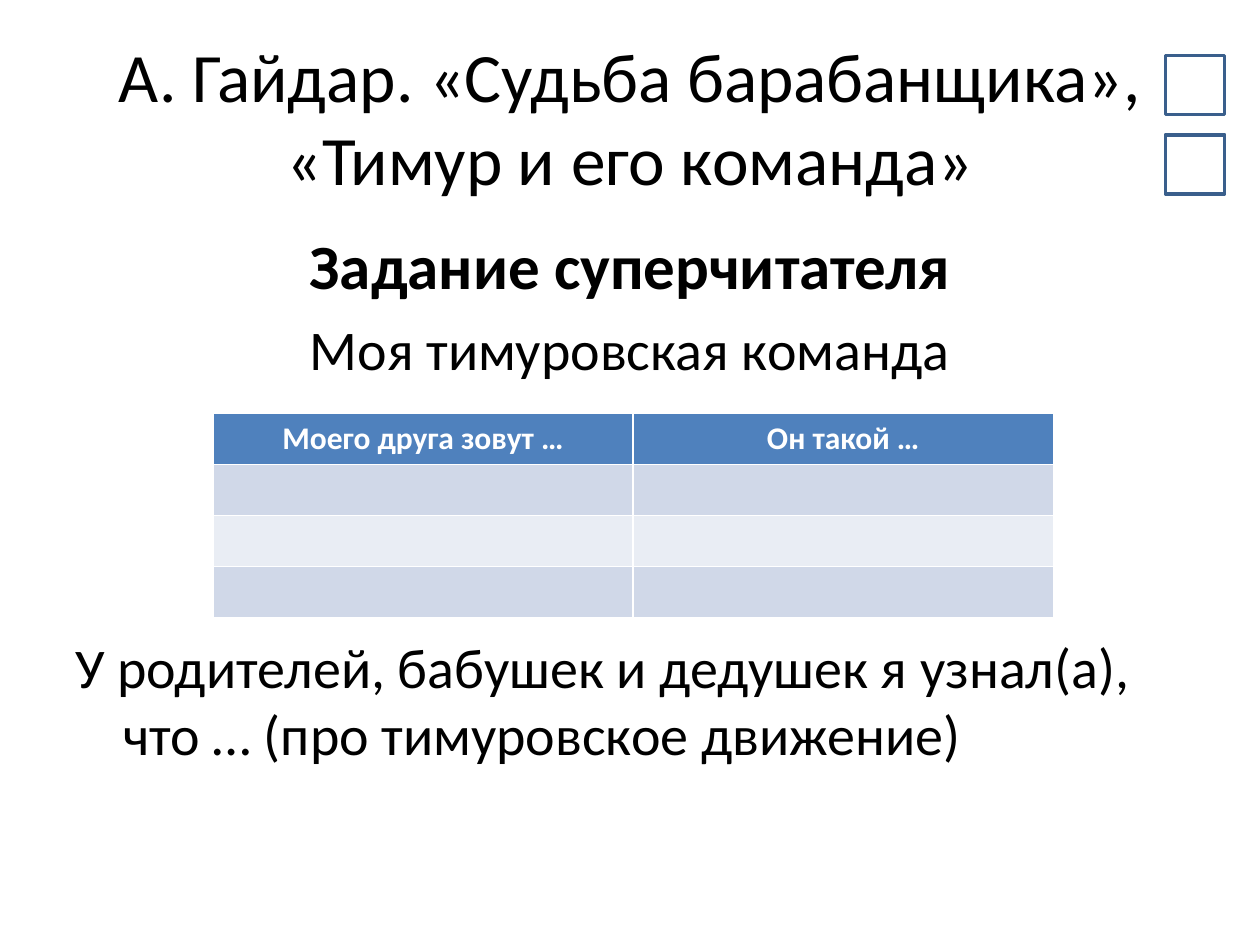
from pptx import Presentation
from pptx.dml.color import RGBColor
from pptx.enum import shapes, text
from pptx.util import Inches, Pt

FONT = "Calibri"
BLACK, WHITE = "000000", "FFFFFF"
HEADER_FILL, BAND_FILLS = "4F81BD", ("D0D8E8", "E9EDF4")
CENTER, LEFT = text.PP_ALIGN.CENTER, text.PP_ALIGN.LEFT


def color(value):
    return RGBColor.from_string(value)


def apply(target, values):
    for name, value in values.items():
        setattr(target, name, value)


def write(paragraph, wording, size, ink=BLACK, bold=False, align=CENTER):
    paragraph.alignment = align
    run = paragraph.add_run()
    run.text = wording
    apply(run.font, {"name": FONT, "size": Pt(size), "bold": bold})
    run.font.color.rgb = color(ink)


def add_text(slide, left, top, width, height, lines, anchor=text.MSO_ANCHOR.TOP):
    box = slide.shapes.add_textbox(*map(Inches, (left, top, width, height)))
    frame = box.text_frame
    apply(frame, {"word_wrap": True, "vertical_anchor": anchor})
    for index, line in enumerate(lines):
        paragraph = frame.add_paragraph() if index else frame.paragraphs[0]
        if index:
            paragraph.space_before = Pt(7)
        write(paragraph, **line)
    return frame


def add_hanging_indent(paragraph, indent):
    properties = paragraph._p.get_or_add_pPr()
    properties.set("marL", str(Inches(indent)))
    properties.set("indent", str(-Inches(indent)))


def add_friends_table(slide, headings, blank_rows):
    row_count = blank_rows + 1
    frame = slide.shapes.add_table(
        row_count, len(headings),
        Inches(1.69), Inches(3.28), Inches(6.67), Inches(0.405 * row_count))
    for row_index, row in enumerate(frame.table.rows):
        fill = BAND_FILLS[(row_index - 1) % 2] if row_index else HEADER_FILL
        for cell, heading in zip(row.cells, headings):
            cell.fill.solid()
            cell.fill.fore_color.rgb = color(fill)
            if row_index == 0:
                write(cell.text_frame.paragraphs[0], heading, 18, WHITE, True)


def add_checkbox(slide, left, top, side):
    checkbox = slide.shapes.add_shape(
        shapes.MSO_SHAPE.RECTANGLE, *map(Inches, (left, top, side, side)))
    checkbox.shadow.inherit = False
    checkbox.fill.background()
    checkbox.line.color.rgb = color("3A5F8C")
    checkbox.line.width = Pt(2)


def main():
    deck = Presentation()
    apply(deck, {"slide_width": Inches(10), "slide_height": Inches(7.5)})
    slide = deck.slides.add_slide(deck.slide_layouts[6])

    add_text(slide, 0.5, 0.3, 9, 1.25, [
        {"wording": "А. Гайдар. «Судьба барабанщика», «Тимур и его команда»",
         "size": 39.6},
    ], text.MSO_ANCHOR.MIDDLE)
    add_text(slide, 0.5, 1.75, 9, 1.4, [
        {"wording": "Задание суперчитателя", "size": 36, "bold": True},
        {"wording": "Моя тимуровская команда", "size": 32},
    ])
    add_friends_table(slide, ("Моего друга зовут …", "Он такой …"), 3)
    family_story = add_text(slide, 0.5, 4.97, 9, 1.73, [
        {"wording": "У родителей, бабушек и дедушек я узнал(а), "
                    "что … (про тимуровское движение)",
         "size": 32, "align": LEFT},
    ])
    add_hanging_indent(family_story.paragraphs[0], 0.38)
    for top in (0.44, 1.07):
        add_checkbox(slide, 9.25, top, 0.47)

    deck.save("out.pptx")


if __name__ == "__main__":
    main()
